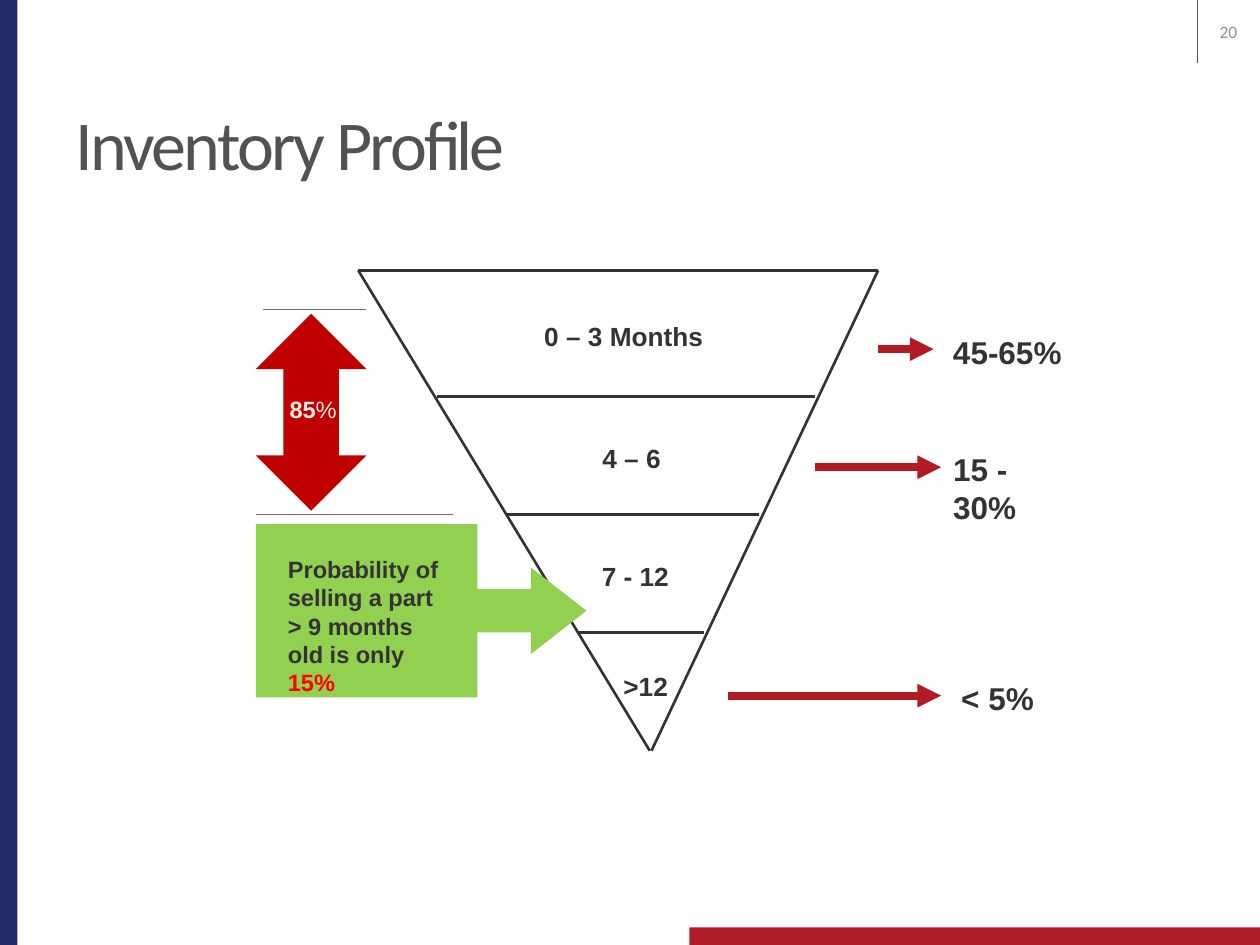
"""Build the inventory profile slide with its inverted pyramid."""
import pptx
import pptx.dml.color
import pptx.enum.shapes
import pptx.enum.text
import pptx.oxml.ns
import pptx.util
import lxml.etree

Pt = pptx.util.Pt
Kind = pptx.enum.shapes.MSO_SHAPE
Align = pptx.enum.text.PP_ALIGN
Anchor = pptx.enum.text.MSO_ANCHOR
HUES = {
    "navy": "242D69", "band": "B21E28", "title": "525252", "page": "909090",
    "ink": "343333", "arrow": "B21A24", "red": "C00000", "cream": "EEECE1",
    "rule": "6B6C6B", "green": "92D050", "alert": "FF0000",
}


def color(name):
    return pptx.dml.color.RGBColor.from_string(HUES[name])


def child(node, tag, **attrs):
    return lxml.etree.SubElement(node, pptx.oxml.ns.qn(tag), attrs)


def style(run, size=15, hue="ink", bold=True, face="Arial"):
    run.font.size = Pt(size)
    run.font.name = face
    run.font.bold = bold
    run.font.color.rgb = color(hue)


def label(slide, text, box, align=Align.LEFT, anchor=Anchor.TOP, tail="", tail_fmt=None, **fmt):
    frame = slide.shapes.add_textbox(*map(Pt, box)).text_frame
    frame.word_wrap = True
    frame.vertical_anchor = anchor
    para = frame.paragraphs[0]
    para.alignment = align
    run = para.add_run()
    run.text = text
    style(run, **fmt)
    if tail:
        run = para.add_run()
        run.text = tail
        style(run, **{**fmt, **tail_fmt})


def block(slide, kind, box, hue, adjust=()):
    shape = slide.shapes.add_shape(kind, *map(Pt, box))
    shape.shadow.inherit = False
    shape.fill.solid()
    shape.fill.fore_color.rgb = color(hue)
    shape.line.fill.background()
    for i, value in enumerate(adjust):
        shape.adjustments[i] = value


def line(slide, start, end, hue="ink", width=1.5, head=False):
    link = slide.shapes.add_connector(
        pptx.enum.shapes.MSO_CONNECTOR.STRAIGHT, *map(Pt, start + end))
    link.line.color.rgb = color(hue)
    link.line.width = Pt(width)
    props = link._element.spPr
    if head:
        child(props.find(pptx.oxml.ns.qn("a:ln")), "a:tailEnd", type="triangle")
    child(props, "a:effectLst")


def heading(slide, text):
    title = slide.shapes.title
    title.left, title.top, title.width, title.height = map(Pt, (36, 51, 648, 60.5))
    frame = title.text_frame
    frame.vertical_anchor = Anchor.MIDDLE
    para = frame.paragraphs[0]
    para.alignment = Align.LEFT
    run = para.add_run()
    run.text = text
    style(run, size=40, hue="title", bold=False, face="Calibri")
    run.font._element.set("spc", "-150")


def frame(slide):
    block(slide, Kind.RECTANGLE, (0, 0, 10, 540), "navy")
    block(slide, Kind.RECTANGLE, (394, 530, 326, 10), "band")
    line(slide, (684, 0), (684, 36), "title", 0.5)
    label(slide, "20", (684, 0, 36, 36), align=Align.CENTER, anchor=Anchor.MIDDLE,
          size=10, hue="page", bold=False, face="Calibri")


def funnel(slide):
    left, right, top, base = 204.7, 501.8, 154.5, 429
    line(slide, (left, top), (right, top))
    line(slide, (left, top), (371.3, base))
    line(slide, (372.3, base), (right, top))
    for x, end, y in ((249.8, 465.8, 226.5), (290, 434, 294), (330.5, 402.5, 361.5)):
        line(slide, (x, y), (end, y))
    for text, x, y, width in (
        ("0 – 3 Months", 234, 179.5, 244.8), ("4 – 6", 279.2, 249, 163.4),
        ("7 - 12", 319.5, 316.6, 87.1), (">12", 348.5, 379.6, 41),
    ):
        label(slide, text, (x, y, width, 25), align=Align.CENTER)


def shares(slide):
    for text, start, end, y, x, top, width in (
        ("45-65%", 501.8, 533.5, 199.5, 537.5, 186.5, 90.7),
        ("15 - 30%", 465.8, 537.8, 267, 537.5, 253.5, 85.7),
        ("< 5%", 416.2, 537.8, 397.5, 542.2, 384.5, 64),
    ):
        line(slide, (start, y), (end, y), "arrow", 4.5, head=True)
        label(slide, text, (x, top, width, 29), size=18)


def notes(slide):
    block(slide, Kind.UP_DOWN_ARROW, (146.2, 179.3, 63.2, 112.5), "red", (0.36, 0.5))
    label(slide, "85", (158.4, 222, 44.6, 23.8), size=13.5, hue="cream",
          tail="%", tail_fmt={"bold": False})
    line(slide, (259, 294), (146.5, 294), "rule", 0.75)
    line(slide, (209, 177), (150.5, 177), "rule", 0.75)
    block(slide, Kind.RIGHT_ARROW_CALLOUT, (146.2, 299.5, 188.9, 99), "green",
          (0.25, 0.25, 0.32, 0.67))
    label(slide, "Probability of selling a part > 9 months old is only ",
          (157.5, 313.5, 108, 89), size=13.5, tail="15%", tail_fmt={"hue": "alert"})


def main():
    deck = pptx.Presentation()
    deck.slide_width, deck.slide_height = Pt(720), Pt(540)
    slide = deck.slides.add_slide(deck.slide_layouts[5])
    frame(slide)
    heading(slide, "Inventory Profile")
    funnel(slide)
    shares(slide)
    notes(slide)
    deck.save("out.pptx")


if __name__ == "__main__":
    main()
